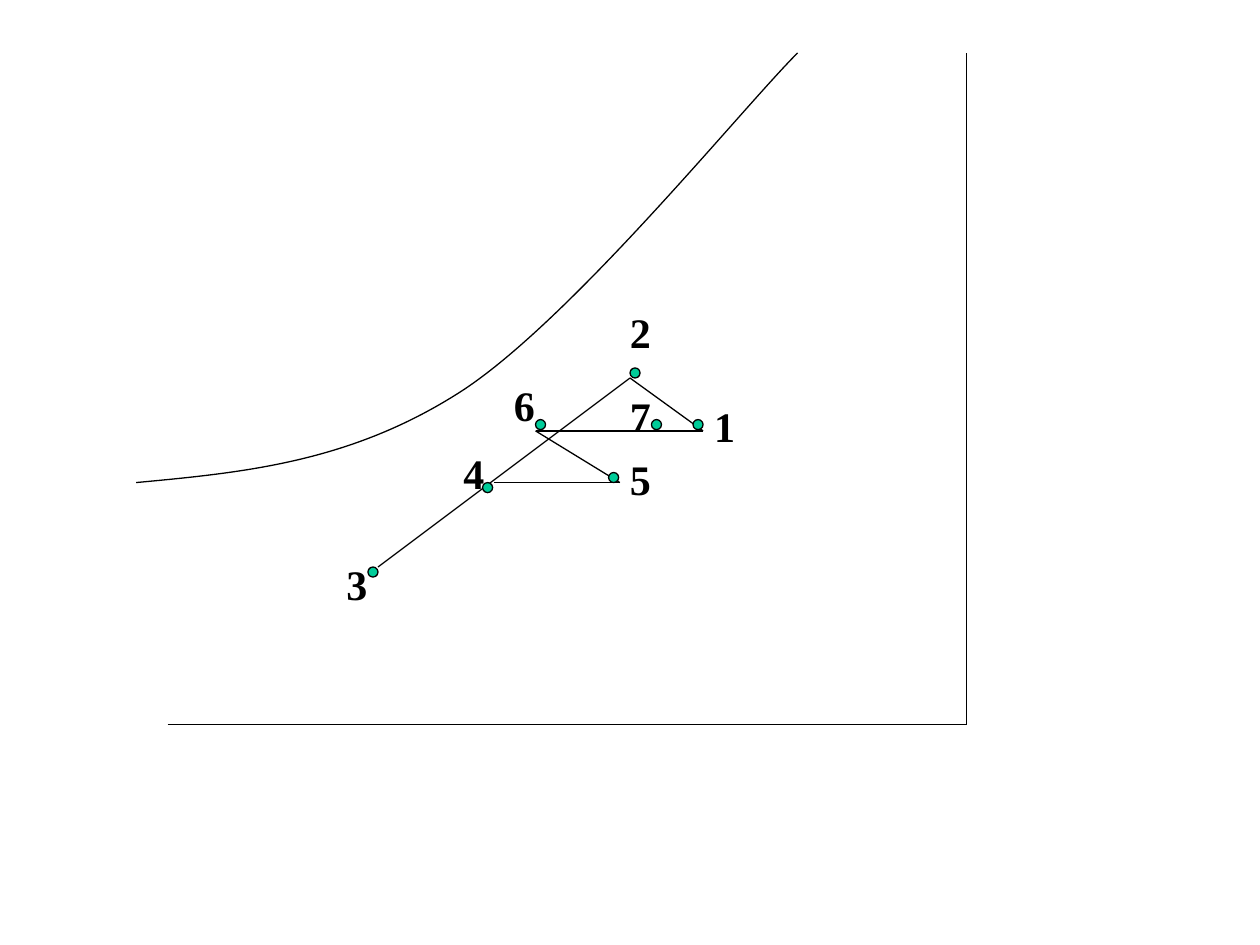
from dataclasses import dataclass
from itertools import pairwise

from lxml.etree import SubElement
from pptx import Presentation
from pptx.dml.color import RGBColor
from pptx.enum.shapes import MSO_CONNECTOR, MSO_SHAPE
from pptx.enum.text import MSO_AUTO_SIZE, MSO_ANCHOR, PP_ALIGN
from pptx.oxml.ns import qn
from pptx.util import Inches, Pt


@dataclass(frozen=True)
class Theme:
    ink: RGBColor = RGBColor(0x00, 0x00, 0x00)
    dot: RGBColor = RGBColor(0x00, 0xCC, 0x99)
    font: str = "Times New Roman"
    label_size: Pt = Pt(24)
    stroke: Pt = Pt(0.75)


THEME = Theme()
DOT_SIZE = 0.08
LABEL_SIZE = (0.37, 0.5)
DIAGRAM_BOX = (1.08, 0.42)  # left, top

# All points are in inches from the corner of the diagram box.
AXES = [(0.25, 5.33), (6.59, 5.33), (6.59, 0)]
CURVE = [(0, 3.41), (0.86, 3.33), (1.71, 3.25), (2.59, 2.68),
         (3.46, 2.11), (4.81, 0.44), (5.25, 0)]
ROUTE = [(1.92, 4.08), (3.92, 2.58), (4.5, 3), (3.17, 3),
         (3.84, 3.41), (2.84, 3.41)]
# number: (corner of dot, corner of label)
STOPS = {
    "1": ((4.42, 2.91), (4.49, 2.71)),
    "2": ((3.92, 2.5), (3.82, 1.96)),
    "3": ((1.84, 4.08), (1.57, 3.96)),
    "4": ((2.75, 3.41), (2.5, 3.08)),
    "5": ((3.75, 3.33), (3.82, 3.13)),
    "6": ((3.17, 2.91), (2.9, 2.54)),
    "7": ((4.09, 2.91), (3.82, 2.63)),
}


def place(box, point):
    return tuple(Inches(start + offset) for start, offset in zip(box, point))


def set_stroke(shape):
    shape.line.color.rgb = THEME.ink
    shape.line.width = THEME.stroke


def add_polyline(page, box, points):
    """Join the points with straight connectors."""
    for start, end in pairwise(points):
        line = page.shapes.add_connector(
            MSO_CONNECTOR.STRAIGHT, *place(box, start), *place(box, end))
        set_stroke(line)
        SubElement(line._element.spPr, qn("a:effectLst"))


def add_curve(page, box, points):
    """Draw cubic Béziers: a start, then two controls and an end for each."""
    start, *others = [place(box, point) for point in points]
    builder = page.shapes.build_freeform(*start)
    builder.add_line_segments(others, close=False)
    curve = builder.convert_to_shape()
    curve.shadow.inherit = False
    curve.fill.background()
    set_stroke(curve)
    outline = next(curve._element.iter(qn("a:path")))
    segments = outline.findall(qn("a:lnTo"))
    for first in range(0, len(segments), 3):
        bezier = SubElement(outline, qn("a:cubicBezTo"))
        for segment in segments[first:first + 3]:
            bezier.append(segment[0])
            outline.remove(segment)


def add_label(page, box, corner, text):
    label = page.shapes.add_textbox(
        *place(box, corner), *map(Inches, LABEL_SIZE))
    frame = label.text_frame
    frame.word_wrap = False
    frame.auto_size = MSO_AUTO_SIZE.SHAPE_TO_FIT_TEXT
    frame.vertical_anchor = MSO_ANCHOR.TOP
    para = frame.paragraphs[0]
    para.text = text
    para.alignment = PP_ALIGN.LEFT
    para.font.name = THEME.font
    para.font.size = THEME.label_size
    para.font.bold = True
    para.font.color.rgb = THEME.ink


def add_dot(page, box, corner):
    dot = page.shapes.add_shape(
        MSO_SHAPE.OVAL, *place(box, corner), Inches(DOT_SIZE), Inches(DOT_SIZE))
    dot.shadow.inherit = False
    dot.fill.solid()
    dot.fill.fore_color.rgb = THEME.dot
    set_stroke(dot)


def add_diagram(page, box):
    add_polyline(page, box, AXES)
    add_curve(page, box, CURVE)
    add_polyline(page, box, ROUTE)
    for number, (_, corner) in STOPS.items():
        add_label(page, box, corner, number)
    for corner, _ in STOPS.values():
        add_dot(page, box, corner)


def main():
    deck = Presentation()
    deck.slide_width, deck.slide_height = Inches(10), Inches(7.5)
    page = deck.slides.add_slide(deck.slide_layouts.get_by_name("Blank"))
    add_diagram(page, DIAGRAM_BOX)
    deck.save("out.pptx")


if __name__ == "__main__":
    main()
